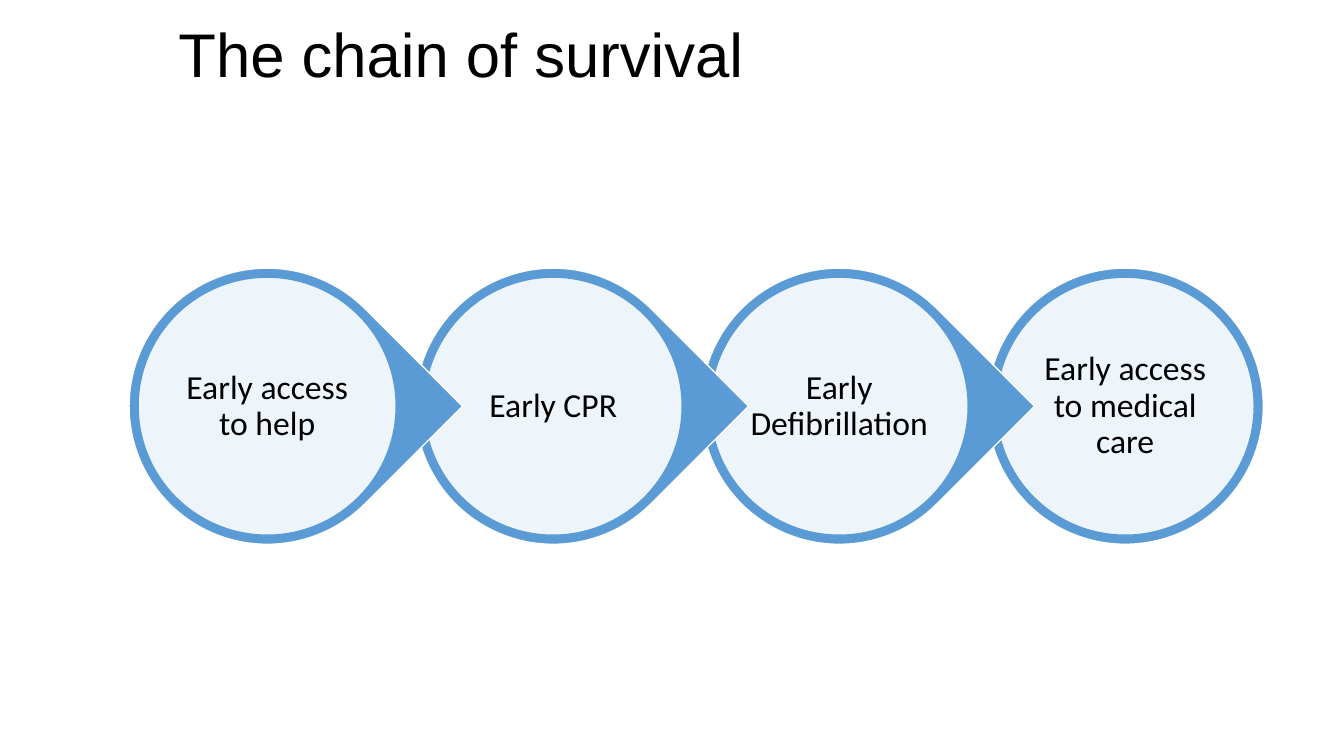
from dataclasses import dataclass

from lxml.etree import SubElement
from pptx import Presentation
from pptx.dml.color import RGBColor
from pptx.enum.shapes import MSO_SHAPE as Preset
from pptx.enum.text import MSO_ANCHOR as Anchor, MSO_AUTO_SIZE as AutoSize, PP_ALIGN as Align
from pptx.oxml.ns import qn
from pptx.shapes.autoshape import Shape
from pptx.shapes.shapetree import GroupShapes
from pptx.slide import Slide
from pptx.text.text import TextFrame
from pptx.util import Inches, Pt


@dataclass(frozen=True)
class Theme:
    blue: RGBColor = RGBColor(0x5B, 0x9B, 0xD5)
    white: RGBColor = RGBColor(0xFF, 0xFF, 0xFF)
    black: RGBColor = RGBColor(0x00, 0x00, 0x00)
    title_font: str = "Arial"
    label_font: str = "Calibri"
    title_size: int = 44
    label_size: int = 24
    line_width: int = 1
    line_spacing: float = 0.9
    disc_opacity: int = 90


@dataclass(frozen=True)
class Link:
    label: str
    left: float
    is_last: bool


THEME = Theme()
LABELS = ["Early access to help", "Early CPR", "Early Defibrillation", "Early access to medical care"]

# Chain geometry, in inches
FIRST_LEFT, LAST_LEFT, CHAIN_TOP = 1.28, 9.79, 2.66
LINK_SIZE = 2.74
DISC_INSET, LABEL_INSET = 0.09, 0.46
LABEL_MARGIN = 0.03


def format_text(frame: TextFrame, text: str, font_name: str, size: int, align: Align) -> None:
    frame.text = text
    frame.word_wrap = True
    frame.auto_size = AutoSize.NONE
    frame.vertical_anchor = Anchor.MIDDLE
    paragraph = frame.paragraphs[0]
    paragraph.alignment = align
    paragraph.line_spacing = THEME.line_spacing
    paragraph.font.name = font_name
    paragraph.font.size = Pt(size)
    paragraph.font.color.rgb = THEME.black


def add_title(slide: Slide, text: str) -> None:
    title = slide.shapes.title
    title.left, title.top = Inches(1.67), Inches(0)
    title.width, title.height = Inches(9.45), Inches(1.15)
    format_text(title.text_frame, text, THEME.title_font, THEME.title_size, Align.LEFT)


def link_box(link: Link, inset: float) -> tuple[int, int, int, int]:
    """Square centred in the link, as left, top, width and height."""
    side = Inches(LINK_SIZE - 2 * inset)
    return Inches(link.left + inset), Inches(CHAIN_TOP + inset), side, side


def add_round(shapes: GroupShapes, preset: Preset, link: Link, inset: float,
              fill: RGBColor, line: RGBColor) -> Shape:
    shape = shapes.add_shape(preset, *link_box(link, inset))
    shape.shadow.inherit = False
    shape.fill.solid()
    shape.fill.fore_color.rgb = fill
    shape.line.color.rgb = line
    shape.line.width = Pt(THEME.line_width)
    return shape


def set_opacity(shape: Shape, percent: int) -> None:
    color = shape.fill._xPr.find(qn("a:solidFill")).find(qn("a:srgbClr"))
    SubElement(color, qn("a:alpha")).set("val", str(percent * 1000))


def add_link(shapes: GroupShapes, link: Link) -> None:
    # Outer ring, pointing right unless it ends the chain
    preset = Preset.OVAL if link.is_last else Preset.TEAR
    ring = add_round(shapes, preset, link, 0, THEME.blue, THEME.white)
    if not link.is_last:
        ring.rotation = 45

    # Pale disc
    disc = add_round(shapes, Preset.OVAL, link, DISC_INSET, THEME.white, THEME.blue)
    set_opacity(disc, THEME.disc_opacity)

    # Label
    frame = shapes.add_textbox(*link_box(link, LABEL_INSET)).text_frame
    frame.margin_left = frame.margin_right = Inches(LABEL_MARGIN)
    frame.margin_top = frame.margin_bottom = Inches(LABEL_MARGIN)
    format_text(frame, link.label, THEME.label_font, THEME.label_size, Align.CENTER)


def main() -> None:
    presentation = Presentation()
    presentation.slide_width, presentation.slide_height = Inches(13.33), Inches(7.5)
    slide = presentation.slides.add_slide(presentation.slide_layouts.get_by_name("Title Only"))
    add_title(slide, "The chain of survival")

    # Links go from last to first, so each point overlaps the next ring
    last = len(LABELS) - 1
    step = (LAST_LEFT - FIRST_LEFT) / last
    links = [Link(label, FIRST_LEFT + index * step, index == last)
             for index, label in enumerate(LABELS)]
    chain = slide.shapes.add_group_shape()
    for link in reversed(links):
        add_link(chain.shapes, link)

    presentation.save("out.pptx")


if __name__ == "__main__":
    main()
